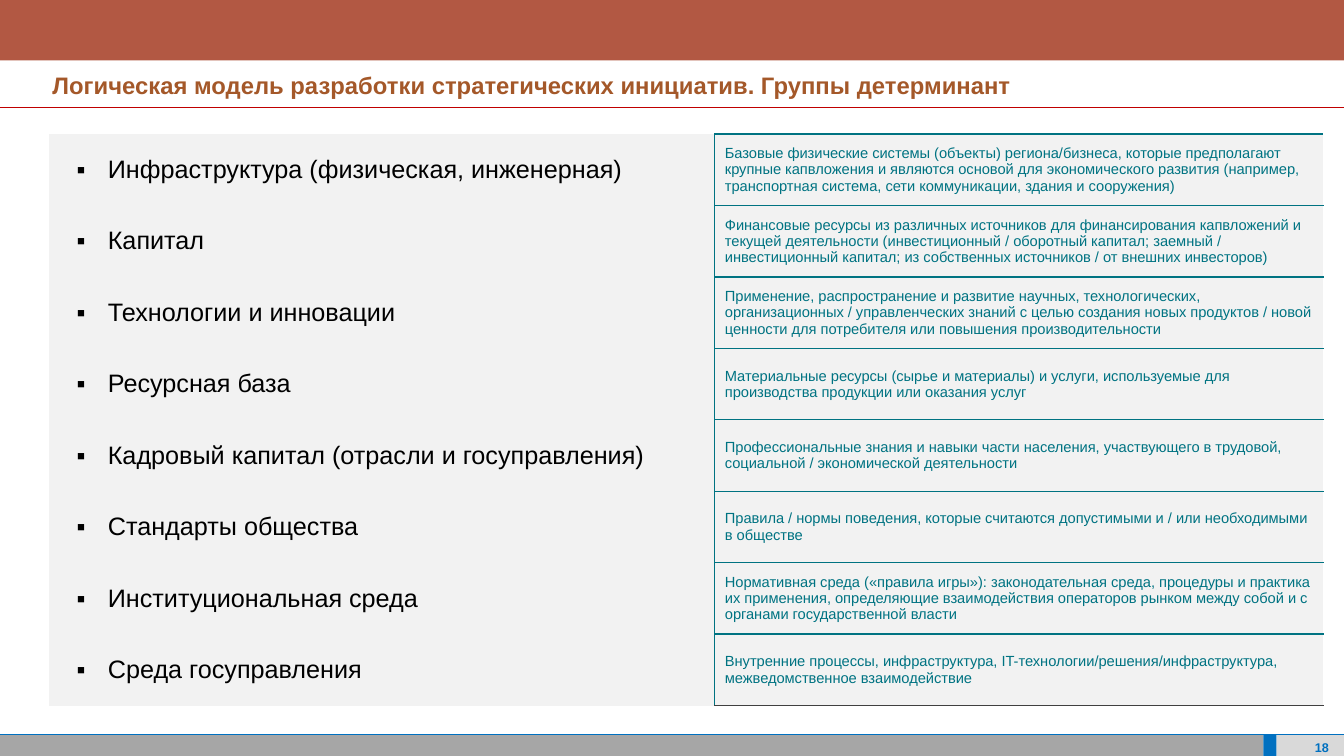
from dataclasses import dataclass

import pptx
import pptx.dml.color
import pptx.enum.shapes
import pptx.enum.text
import pptx.oxml
import pptx.oxml.ns
import pptx.util
from pptx.util import Inches

COLORS = {
    "brick": "B25843", "title": "A45829", "red": "C00000", "blue": "0070C0",
    "gray": "A6A6A6", "light": "D9D9D9", "cell": "F2F2F2", "dark": "404040",
    "teal": "007382", "white": "FFFFFF", "black": "000000",
}
FONT = "Arial"
WIDTH, HEIGHT = 13.33, 7.5
FOOTER_TOP, FOOTER_HEIGHT = 7.29, 0.21
PLAIN_TABLE_STYLE = "{2D5ABB26-0587-4C30-8999-92F81FD0307C}"
Align = pptx.enum.text.PP_ALIGN
Anchor = pptx.enum.text.MSO_ANCHOR


@dataclass
class Band:
    left: float
    top: float
    width: float
    height: float
    color: str


@dataclass
class Rule:
    top: float
    color: str


@dataclass
class Label:
    left: float
    top: float
    width: float
    height: float
    margins: tuple[float, float, float, float]
    text: str
    size: float
    color: str
    align: Align


@dataclass
class Determinant:
    name: str
    description: str


BANDS = [
    Band(0, FOOTER_TOP, 12.53, FOOTER_HEIGHT, "gray"),
    Band(12.66, FOOTER_TOP, 0.67, FOOTER_HEIGHT, "light"),
    Band(12.53, FOOTER_TOP, 0.13, FOOTER_HEIGHT, "blue"),
    Band(0, 0.6, WIDTH, 0.47, "white"),
    Band(0, 0, WIDTH, 0.6, "brick"),
]
RULES = [Rule(FOOTER_TOP, "blue"), Rule(1.07, "red")]
LABELS = [
    Label(12.76, 7.32, 0.58, 0.16, (0.12, 0, 0.16, 0), "18", 9, "blue", Align.RIGHT),
    Label(0.28, 0.6, 13.05, 0.47, (0.24, 0.04, 0.16, 0.08),
          "Логическая модель разработки стратегических инициатив. Группы детерминант",
          17, "title", Align.JUSTIFY),
]
DETERMINANTS = [
    Determinant("Инфраструктура (физическая, инженерная)",
                "Базовые физические системы (объекты) региона/бизнеса, которые предполагают крупные "
                "капвложения и являются основой для экономического развития (например, "
                "транспортная система, сети коммуникации, здания и сооружения)"),
    Determinant("Капитал",
                "Финансовые ресурсы из различных источников для финансирования капвложений и "
                "текущей деятельности (инвестиционный / оборотный капитал; заемный / "
                "инвестиционный капитал; из собственных источников / от внешних инвесторов)"),
    Determinant("Технологии и инновации",
                "Применение, распространение и развитие научных, технологических, "
                "организационных / управленческих знаний с целью создания новых продуктов / новой "
                "ценности для потребителя или повышения производительности"),
    Determinant("Ресурсная база",
                "Материальные ресурсы (сырье и материалы) и услуги, используемые для "
                "производства продукции или оказания услуг"),
    Determinant("Кадровый капитал (отрасли и госуправления)",
                "Профессиональные знания и навыки части населения, участвующего в трудовой, "
                "социальной / экономической деятельности"),
    Determinant("Стандарты общества",
                "Правила / нормы поведения, которые считаются допустимыми и / или необходимыми "
                "в обществе"),
    Determinant("Институциональная среда",
                "Нормативная среда («правила игры»): законодательная среда, процедуры и практика "
                "их применения, определяющие взаимодействия операторов рынком между собой и с "
                "органами государственной власти"),
    Determinant("Среда госуправления",
                "Внутренние процессы, инфраструктура, IT-технологии/решения/инфраструктура, "
                "межведомственное взаимодействие"),
]


def rgb(name: str) -> pptx.dml.color.RGBColor:
    return pptx.dml.color.RGBColor.from_string(COLORS[name])


def add_span(para, text: str, size: float, color: str, bold: bool = False) -> None:
    span = para.add_run()
    span.text = text
    span.font.name = FONT
    span.font.size = pptx.util.Pt(size)
    span.font.bold = bold
    span.font.color.rgb = rgb(color)


def set_margins(target, margins: tuple[float, float, float, float]) -> None:
    (target.margin_left, target.margin_top,
     target.margin_right, target.margin_bottom) = map(Inches, margins)


def add_band(page, band: Band) -> None:
    shape = page.shapes.add_shape(
        pptx.enum.shapes.MSO_SHAPE.RECTANGLE,
        Inches(band.left), Inches(band.top), Inches(band.width), Inches(band.height))
    shape.shadow.inherit = False
    shape.fill.solid()
    shape.fill.fore_color.rgb = rgb(band.color)
    shape.line.fill.background()


def add_rule(page, rule: Rule) -> None:
    line = page.shapes.add_connector(
        pptx.enum.shapes.MSO_CONNECTOR.STRAIGHT,
        0, Inches(rule.top), Inches(WIDTH), Inches(rule.top))
    line.line.color.rgb = rgb(rule.color)
    line.line.width = pptx.util.Pt(0.5)
    pptx.oxml.ns.qn("a:effectLst")
    line._element.spPr.append(pptx.oxml.parse_xml(
        f'<a:effectLst {pptx.oxml.ns.nsdecls("a")}/>'))


def add_label(page, label: Label) -> None:
    box = page.shapes.add_textbox(
        Inches(label.left), Inches(label.top), Inches(label.width), Inches(label.height))
    frame = box.text_frame
    frame.word_wrap = True
    frame.vertical_anchor = Anchor.MIDDLE
    set_margins(frame, label.margins)
    para = frame.paragraphs[0]
    para.alignment = label.align
    para.line_spacing = 1.2
    para.space_after = pptx.util.Pt(8)
    add_span(para, label.text, label.size, label.color, bold=True)


def add_border(cell, side: str, color: str, width: float = 1) -> None:
    cell._tc.get_or_add_tcPr().append(pptx.oxml.parse_xml(
        f'<a:ln{side} {pptx.oxml.ns.nsdecls("a")} w="{pptx.util.Pt(width)}"><a:solidFill>'
        f'<a:srgbClr val="{COLORS[color]}"/></a:solidFill></a:ln{side}>'))


def add_bullet(para) -> None:
    indent = Inches(0.31)
    props = para._p.get_or_add_pPr()
    props.set("marL", str(indent))
    props.set("indent", str(-indent))
    for tag in (f'buFont {pptx.oxml.ns.nsdecls("a")} typeface="{FONT}"',
                f'buChar {pptx.oxml.ns.nsdecls("a")} char="▪"'):
        props.append(pptx.oxml.parse_xml(f"<a:{tag}/>"))


def fill_cell(cell, text: str, size: float, color: str, left_margin: float,
              borders: dict[str, tuple], bullet: bool = False) -> None:
    for side, border in borders.items():
        add_border(cell, side, *border)
    cell.fill.solid()
    cell.fill.fore_color.rgb = rgb("cell")
    cell.vertical_anchor = Anchor.MIDDLE
    set_margins(cell, (left_margin, 0.05, 0.1, 0.05))
    para = cell.text_frame.paragraphs[0]
    if bullet:
        add_bullet(para)
    add_span(para, text, size, color)


def add_determinants(page, items: list[Determinant]) -> None:
    frame = page.shapes.add_table(
        len(items), 2, Inches(0.48), Inches(1.33), Inches(12.65), Inches(5.67))
    table = frame.table
    table.first_row = table.horz_banding = False
    table._tbl.tblPr.find(pptx.oxml.ns.qn("a:tableStyleId")).text = PLAIN_TABLE_STYLE
    for column, width in zip(table.columns, (6.61, 6.04)):
        column.width = Inches(width)
    for index, item in enumerate(items):
        bottom = ("dark", 0.5) if index == len(items) - 1 else ("teal",)
        fill_cell(table.cell(index, 0), item.name, 18, "black", 0.28,
                  {"L": ("white",), "R": ("teal",)}, bullet=True)
        fill_cell(table.cell(index, 1), item.description, 10.5, "teal", 0.1,
                  {"L": ("teal",), "R": ("white",), "T": ("teal",), "B": bottom})


def main() -> None:
    deck = pptx.Presentation()
    deck.slide_width, deck.slide_height = Inches(WIDTH), Inches(HEIGHT)
    page = deck.slides.add_slide(deck.slide_layouts[6])
    # Header and footer
    for band in BANDS:
        add_band(page, band)
    for rule in RULES:
        add_rule(page, rule)
    for label in LABELS:
        add_label(page, label)
    # Groups of determinants
    add_determinants(page, DETERMINANTS)
    deck.save("out.pptx")


if __name__ == "__main__":
    main()
